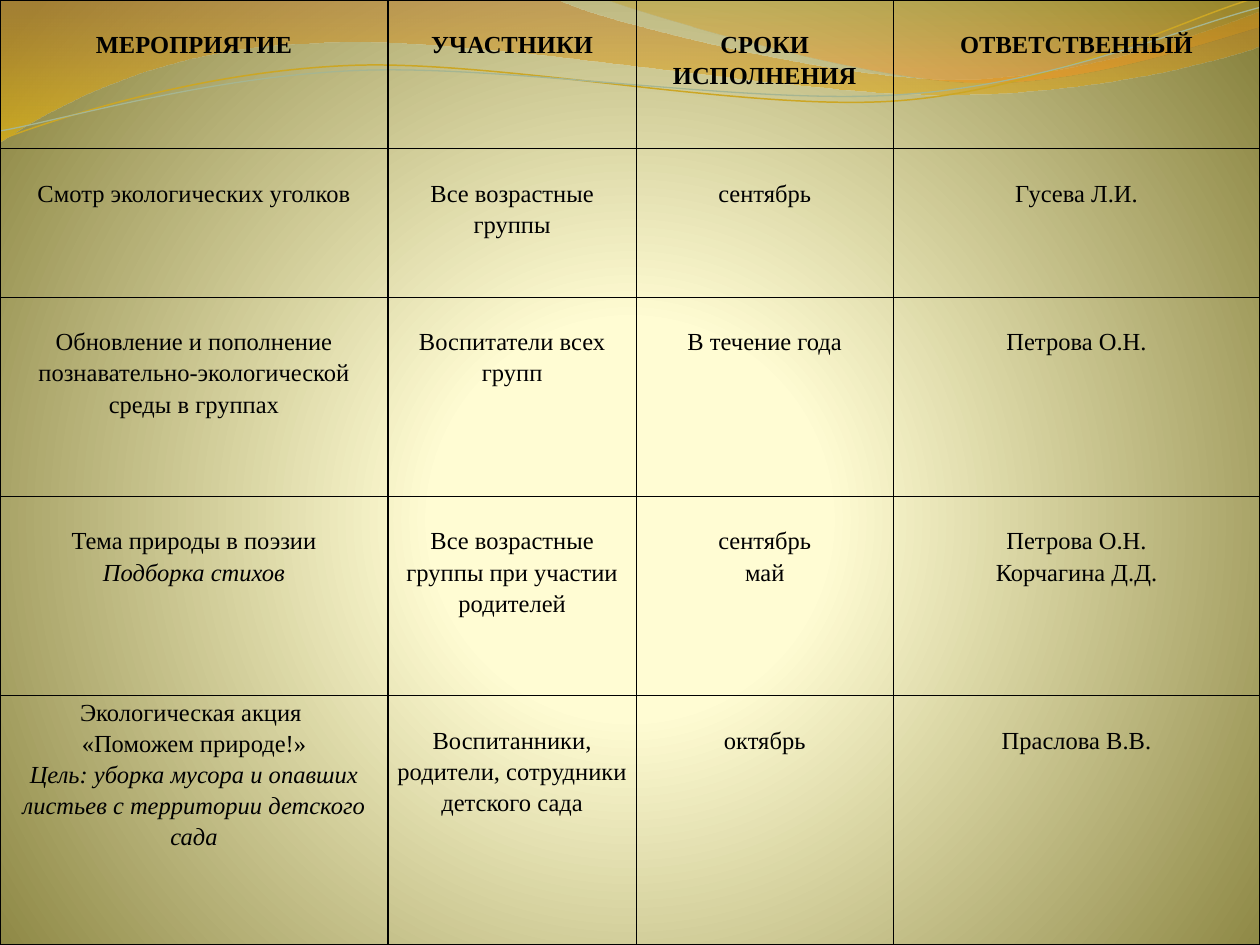
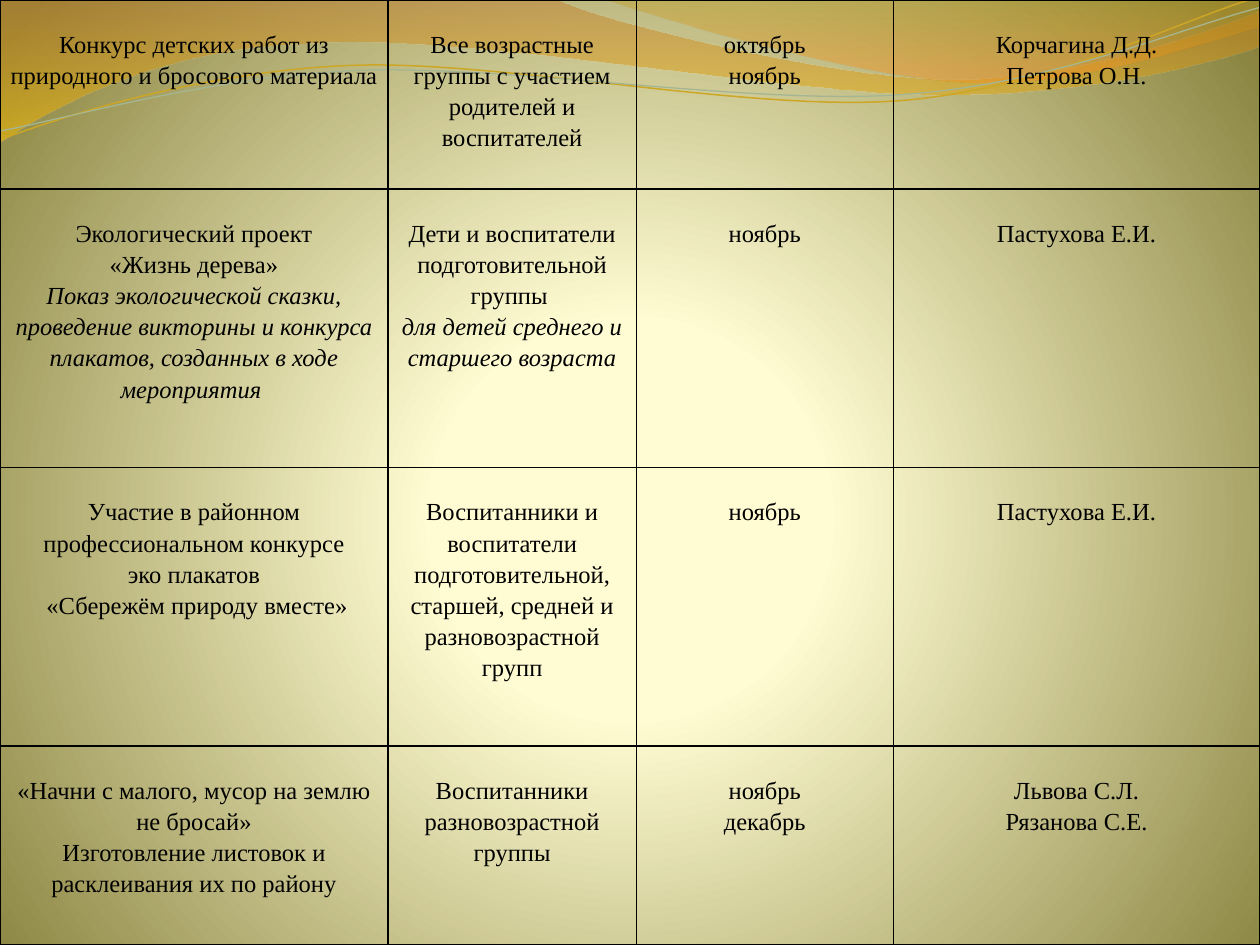
import math

from lxml import etree
from pptx import Presentation
from pptx.dml.color import RGBColor
from pptx.enum.text import PP_ALIGN
from pptx.oxml.ns import qn
from pptx.util import Inches, Pt

CENTER = PP_ALIGN.CENTER
FONT = "Times New Roman"
BLACK = "000000"
PAGE_WIDTH, PAGE_HEIGHT = 10, 7.5

COLUMN_WIDTHS = [3.08, 1.97, 2.04, 2.91]
SIDE_MARGIN = 0.05
TOP_GAP = 0.22
ITALIC = "*"  # a line that starts with this mark is set in italics
CURVE_TILT = -2.7  # degrees

# Outlines: a start point, then line ends (x, y) or
# cubic curves (x1, y1, x2, y2, x, y), in inches.
WIDE_WAVE = [
    (0, 0), (4.4, -0.01),
    (4.76, 0.17, 6.64, 0.63, 7.58, 0.63), (8.53, 0.63, 9.58, 0.26, 10, 0.09),
    (10.01, 0.36),
    (9.83, 0.44, 8.7, 0.76, 7.46, 0.75), (6.22, 0.75, 3.82, 0.28, 2.57, 0.34),
    (1.29, 0.36, 0.46, 0.83, -0.01, 1.13), (0, 0),
]
RIGHT_WAVE = [
    (4.79, -0.01),
    (5.09, 0.11, 6.82, 0.62, 7.69, 0.65), (8.56, 0.69, 9.61, 0.32, 10, 0.21),
    (10, 0), (4.79, -0.01),
]
GOLD_CURVE = [
    (0, 1.11), (0.48, 0.93, 1.58, 0.57, 2.77, 0.52),
    (3.95, 0.47, 5.93, 0.89, 7.13, 0.8), (8.33, 0.71, 9.38, 0.15, 9.98, -0.02),
]
SAGE_CURVE = [
    (0, 1.04), (0.47, 0.96, 1.64, 0.61, 2.83, 0.56),
    (4.03, 0.51, 5.97, 0.84, 7.17, 0.75), (8.36, 0.67, 9.41, 0.21, 10, 0.06),
]

AUTUMN_START = [
    ["МЕРОПРИЯТИЕ", "УЧАСТНИКИ", "СРОКИ\nИСПОЛНЕНИЯ", "ОТВЕТСТВЕННЫЙ"],
    ["Смотр экологических уголков", "Все возрастные группы", "сентябрь",
     "Гусева Л.И."],
    ["Обновление и пополнение познавательно-экологической среды в группах",
     "Воспитатели всех\nгрупп", "В течение года", "Петрова О.Н."],
    ["Тема природы в поэзии\n*Подборка стихов",
     "Все возрастные группы при участии родителей", "сентябрь\nмай",
     "Петрова О.Н.\nКорчагина Д.Д."],
    ["Экологическая акция \n«Поможем природе!»\n"
     "*Цель: уборка мусора и опавших листьев с территории детского сада",
     "Воспитанники, родители, сотрудники детского сада", "октябрь",
     "Праслова В.В."],
]
AUTUMN_END = [
    ["Конкурс детских работ из природного и бросового материала",
     "Все возрастные группы с участием родителей и воспитателей",
     "октябрь\nноябрь", "Корчагина Д.Д.\nПетрова О.Н."],
    ["Экологический проект\n«Жизнь дерева»\n"
     "*Показ экологической сказки, проведение викторины и конкурса плакатов, "
     "созданных в ходе мероприятия ",
     "Дети и воспитатели подготовительной группы \n"
     "*для детей среднего и\n*старшего возраста",
     "ноябрь", "Пастухова Е.И."],
    ["Участие в районном профессиональном конкурсе\nэко плакатов\n"
     " «Сбережём природу вместе»",
     "Воспитанники и воспитатели подготовительной, старшей, средней и "
     "разновозрастной групп",
     "ноябрь", "Пастухова Е.И."],
    ["«Начни с малого, мусор на землю не бросай»\n"
     "Изготовление листовок и расклеивания их по району",
     "Воспитанники разновозрастной группы", "ноябрь\nдекабрь",
     "Львова С.Л.\nРязанова С.Е."],
]


def color(value):
    return RGBColor.from_string(value)


def set_gradient(fill, element, stops):
    """Fill with (position, colour, opacity) stops; return the gradFill element."""
    fill.gradient()
    gradient = element.find(".//" + qn("a:gradFill"))
    gradient.clear()
    stop_list = etree.SubElement(gradient, qn("a:gsLst"))
    for position, value, opacity in stops:
        stop = etree.SubElement(stop_list, qn("a:gs"), pos=str(position * 1000))
        tint = etree.SubElement(stop, qn("a:srgbClr"), val=value)
        if opacity < 100:
            etree.SubElement(tint, qn("a:alpha"), val=str(opacity * 1000))
    return gradient


def set_background(master):
    stops = [(0, "FFFCD4", 100), (25, "FFFCD3", 100), (100, "89833F", 100)]
    gradient = set_gradient(master.background.fill, master.element, stops)
    circle = etree.SubElement(gradient, qn("a:path"))
    circle.set("path", "circle")
    etree.SubElement(circle, qn("a:fillToRect"),
                     l="10000", t="110000", r="10000", b="100000")


def turn(points, degrees):
    """Turn points about the middle of the box around them."""
    xs, ys = zip(*points)
    mid_x, mid_y = (min(xs) + max(xs)) / 2, (min(ys) + max(ys)) / 2
    cos, sin = math.cos(math.radians(degrees)), math.sin(math.radians(degrees))
    return [(mid_x + (x - mid_x) * cos - (y - mid_y) * sin,
             mid_y + (x - mid_x) * sin + (y - mid_y) * cos) for x, y in points]


def draw_outline(page, outline, close, tilt=0):
    """Build a freeform through all points, then join triples into curves."""
    points = [pair for step in outline for pair in zip(step[::2], step[1::2])]
    points = [(Inches(x), Inches(y)) for x, y in turn(points, -tilt)]
    builder = page.shapes.build_freeform(*points[0])
    builder.add_line_segments(points[1:], close=close)
    shape = builder.convert_to_shape()
    shape.shadow.inherit = False
    shape.rotation = tilt
    segments = iter(shape.element.findall(".//" + qn("a:lnTo")))
    for step in outline[1:]:
        segment = next(segments)
        if len(step) == 6:
            segment.addprevious(etree.Element(qn("a:cubicBezTo")))
            curve = segment.getprevious()
            for part in (segment, next(segments), next(segments)):
                curve.append(part[0])
                part.getparent().remove(part)
    return shape


def add_wave(page, outline, stops):
    wave = draw_outline(page, outline, close=True)
    wave.line.fill.background()
    gradient = set_gradient(wave.fill, wave.element, stops)
    etree.SubElement(gradient, qn("a:lin"), ang="5400000", scaled="0")
    return wave


def add_curve(page, outline, value, width):
    curve = draw_outline(page, outline, close=False, tilt=CURVE_TILT)
    curve.fill.background()
    curve.line.color.rgb = color(value)
    curve.line.width = Pt(width)
    return curve


def add_waves(page, master):
    """Draw the waves with the page's shape builder and hand them to the master."""
    waves = [
        add_wave(page, WIDE_WAVE, [(0, "C07A28", 45), (100, "F7BF00", 55)]),
        add_wave(page, RIGHT_WAVE, [(0, "C09709", 30), (80, "F59320", 45)]),
        add_curve(page, GOLD_CURVE, "CCA624", 0.85),
        add_curve(page, SAGE_CURVE, "A5B592", 0.75),
    ]
    tree = master.element.find(".//" + qn("p:spTree"))
    for number, wave in enumerate(waves, start=101):
        wave.element.find(".//" + qn("p:cNvPr")).set("id", str(number))
        tree.append(wave.element)


def set_borders(cell):
    properties = cell._tc.get_or_add_tcPr()
    for side in ("lnL", "lnR", "lnT", "lnB"):
        border = etree.SubElement(properties, qn("a:" + side), w=str(Pt(1)))
        solid = etree.SubElement(border, qn("a:solidFill"))
        etree.SubElement(solid, qn("a:srgbClr"), val=BLACK)


def fill_cell(cell, text, bold, top_gap):
    set_borders(cell)
    cell.fill.background()
    cell.margin_left = cell.margin_right = Inches(SIDE_MARGIN)
    cell.margin_top, cell.margin_bottom = Inches(top_gap), 0
    lines = text.split("\n")
    cell.text_frame.text = "\n".join(line.removeprefix(ITALIC) for line in lines)
    for para, line in zip(cell.text_frame.paragraphs, lines):
        para.alignment = CENTER
        para.line_spacing = 1.15
        para.font.name = FONT
        para.font.size = Pt(14)
        para.font.bold = bold
        para.font.italic = line.startswith(ITALIC)
        para.font.color.rgb = color(BLACK)


def add_plan(page, rows, heights, has_header=False, flush_cells=()):
    """Add the plan table; flush_cells are (row, column) pairs without a top gap."""
    frame = page.shapes.add_table(len(rows), len(COLUMN_WIDTHS), 0, 0,
                                  Inches(PAGE_WIDTH), Inches(PAGE_HEIGHT))
    plan = frame.table
    plan.first_row = has_header
    plan.horz_banding = False
    for column, width in zip(plan.columns, COLUMN_WIDTHS):
        column.width = Inches(width)
    for row, height in zip(plan.rows, heights):
        row.height = Inches(height)
    for r, texts in enumerate(rows):
        for c, text in enumerate(texts):
            top_gap = 0 if (r, c) in flush_cells else TOP_GAP
            fill_cell(plan.cell(r, c), text, has_header and r == 0, top_gap)


def main():
    deck = Presentation()
    deck.slide_width, deck.slide_height = Inches(PAGE_WIDTH), Inches(PAGE_HEIGHT)
    blank = deck.slide_layouts[6]
    start_page, end_page = (deck.slides.add_slide(blank) for _ in range(2))
    set_background(deck.slide_master)
    add_waves(start_page, deck.slide_master)
    add_plan(start_page, AUTUMN_START, [1.18, 1.18, 1.58, 1.58, 1.98],
             has_header=True, flush_cells=[(4, 0)])
    add_plan(end_page, AUTUMN_END, [1.5, 2.21, 2.21, 1.58])
    deck.save("out.pptx")


if __name__ == "__main__":
    main()
